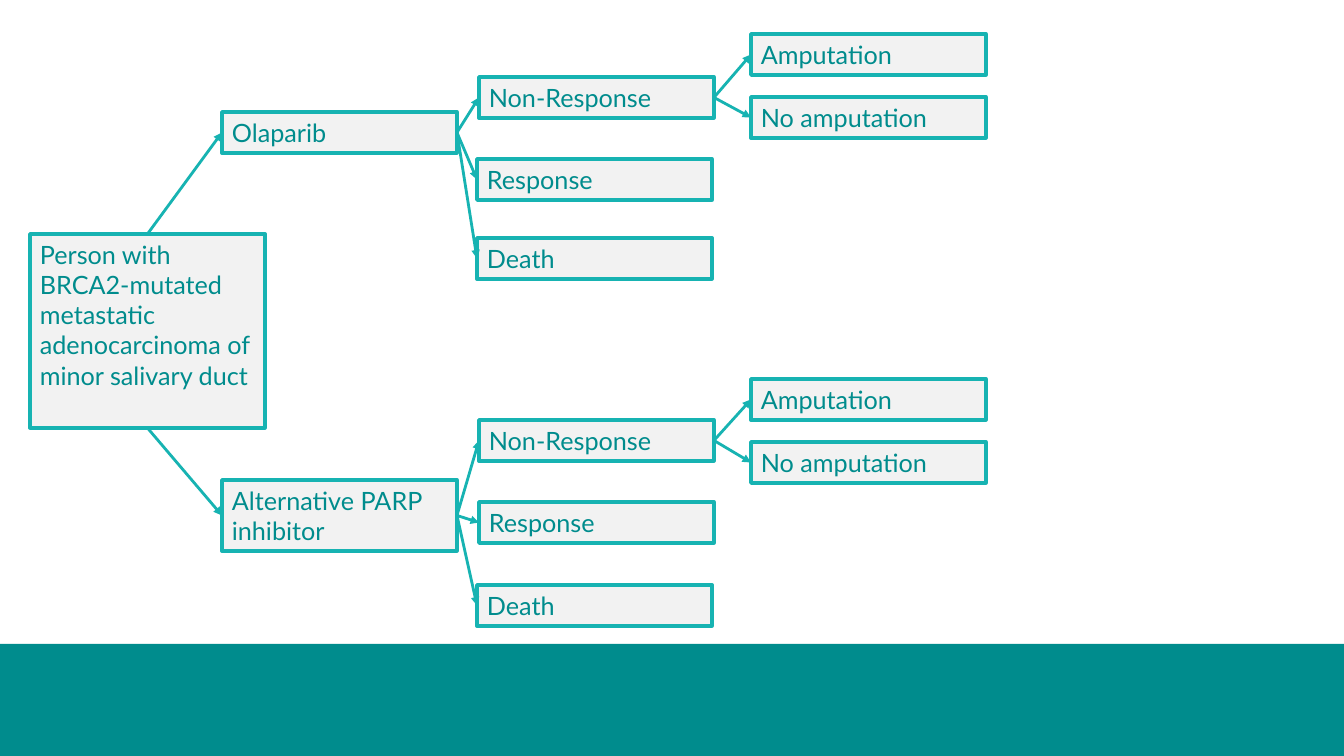
from lxml import etree
from pptx import Presentation
from pptx import util as u
from pptx.dml.color import RGBColor
from pptx.enum import shapes, text
from pptx.oxml.ns import qn

EMU_PER_PX = 914400 / 100.8
SLIDE_W, SLIDE_H = 1344, 756
BAND_TOP = 644
NODE_W, NODE_H = 235, 41
TOP, LEFT, BOTTOM, RIGHT = range(4)

TEAL = RGBColor(0x00, 0x8C, 0x8D)
TURQUOISE = RGBColor(0x17, 0xB3, 0xB2)
PALE_GREY = RGBColor(0xF2, 0xF2, 0xF2)

NODE_FONT = {"name": "Lato", "size": u.Pt(18)}
NODE_FRAME = {
    "word_wrap": True,
    "vertical_anchor": text.MSO_ANCHOR.TOP,
    "auto_size": text.MSO_AUTO_SIZE.SHAPE_TO_FIT_TEXT,
}

PATIENT = ("Person with BRCA2-mutated metastatic adenocarcinoma of minor salivary duct",
           30, 234, 194)
# Each node: label, left, top, height
ARMS = [
    {
        "treatment": ("Olaparib", 222, 112, NODE_H),
        "leaves_patient": TOP,
        "outcomes": [("Non-Response", 479, 77), ("Response", 477, 159), ("Death", 477, 238)],
        "surgery": [("Amputation", 751, 34), ("No amputation", 751, 97)],
    },
    {
        "treatment": ("Alternative PARP inhibitor", 222, 480, 71),
        "leaves_patient": BOTTOM,
        "outcomes": [("Non-Response", 479, 420), ("Response", 479, 502), ("Death", 477, 585)],
        "surgery": [("Amputation", 751, 379), ("No amputation", 751, 442)],
    },
]


def px(length):
    return u.Emu(round(length * EMU_PER_PX))


def apply(target, values):
    for name, value in values.items():
        setattr(target, name, value)


def add_rectangle(slide, left, top, width, height, fill):
    rectangle = slide.shapes.add_shape(
        shapes.MSO_SHAPE.RECTANGLE, px(left), px(top), px(width), px(height))
    rectangle.shadow.inherit = False
    rectangle.fill.solid()
    rectangle.fill.fore_color.rgb = fill
    return rectangle


def add_band(slide):
    band = add_rectangle(slide, 0, BAND_TOP, SLIDE_W, SLIDE_H - BAND_TOP, TEAL)
    band.line.fill.background()


def add_node(slide, label, left, top, height=NODE_H):
    node = add_rectangle(slide, left, top, NODE_W, height, PALE_GREY)
    node.line.color.rgb = TURQUOISE
    node.line.width = u.Pt(2.5)
    apply(node.text_frame, NODE_FRAME)
    paragraph = node.text_frame.paragraphs[0]
    paragraph.alignment = text.PP_ALIGN.LEFT
    run = paragraph.add_run()
    run.text = label
    apply(run.font, NODE_FONT)
    run.font.color.rgb = TEAL
    return node


def add_branch(slide, parent, child, side=RIGHT):
    """Arrow from one side of the parent to the left side of the child."""
    branch = slide.shapes.add_connector(shapes.MSO_CONNECTOR.STRAIGHT, 0, 0, 0, 0)
    branch.begin_connect(parent, side)
    branch.end_connect(child, LEFT)
    branch.line.color.rgb = TURQUOISE
    branch.line.width = u.Pt(2)
    etree.SubElement(branch.line._get_or_add_ln(), qn("a:tailEnd"), type="triangle")
    etree.SubElement(branch._element.spPr, qn("a:effectLst"))


def add_children(slide, parent, children):
    nodes = [add_node(slide, *child) for child in children]
    for node in nodes:
        add_branch(slide, parent, node)
    return nodes


def main():
    deck = Presentation()
    deck.slide_width, deck.slide_height = px(SLIDE_W), px(SLIDE_H)
    slide = deck.slides.add_slide(deck.slide_layouts[6])
    add_band(slide)
    patient = add_node(slide, *PATIENT)
    for arm in ARMS:
        treatment = add_node(slide, *arm["treatment"])
        add_branch(slide, patient, treatment, arm["leaves_patient"])
        non_response = add_children(slide, treatment, arm["outcomes"])[0]
        add_children(slide, non_response, arm["surgery"])
    deck.save("out.pptx")


if __name__ == "__main__":
    main()
